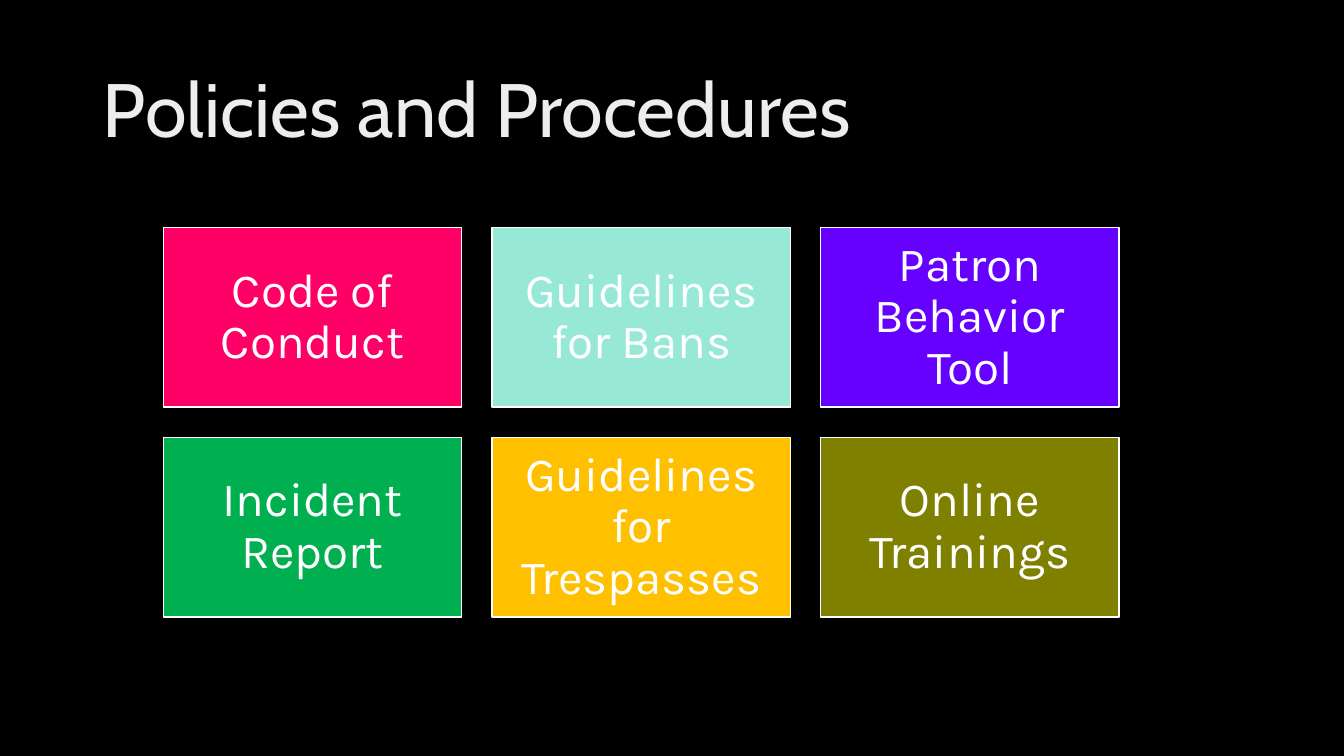
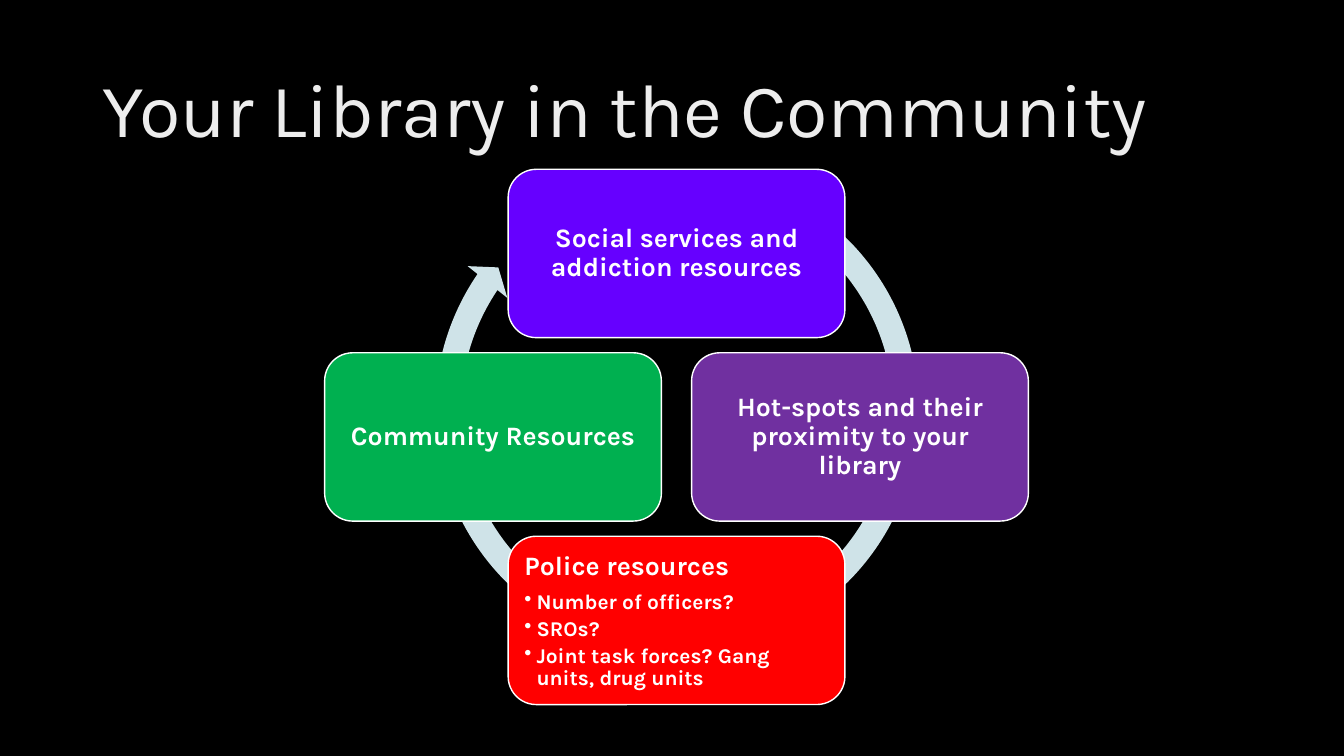
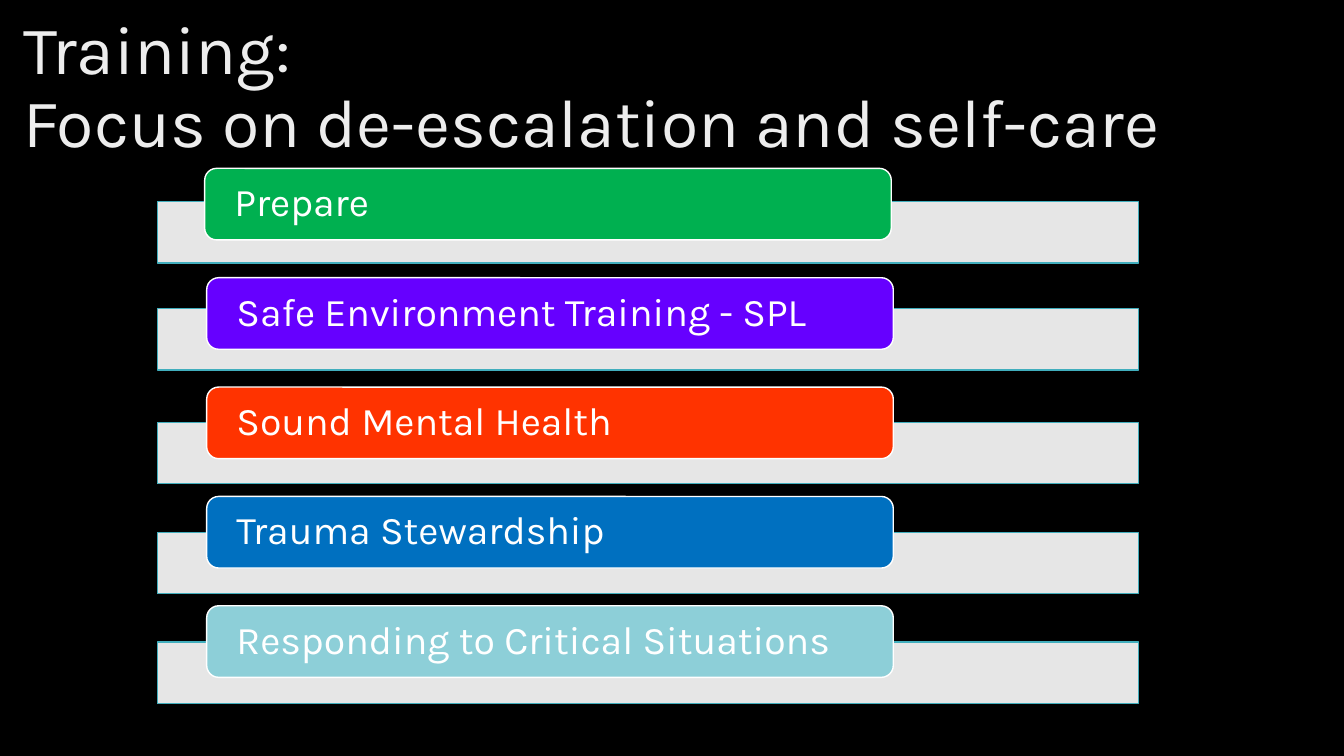
import pptx
import pptx.dml.color
import pptx.enum.shapes
import pptx.enum.text
import pptx.util
import lxml.etree

Inches = pptx.util.Inches
Pt = pptx.util.Pt
SHAPE = pptx.enum.shapes.MSO_SHAPE
ALIGN = pptx.enum.text.PP_ALIGN
ANCHOR = pptx.enum.text.MSO_ANCHOR


def colour(value):
    return pptx.dml.color.RGBColor.from_string(value)


class Deck:
    font = "Karla"
    background = "000000"
    title_colour = "EDEDED"
    text_colour = "FFFFFF"
    line_spacing = 0.9

    def __init__(self):
        self.deck = pptx.Presentation()
        self.deck.slide_width = Inches(13.33)
        self.deck.slide_height = Inches(7.5)
        fill = self.deck.slide_master.background.fill
        fill.solid()
        fill.fore_color.rgb = colour(self.background)
        self.page = None

    def add_page(self, text, area=(0.92, 0.4, 11.5, 1.45), size=54, font=None):
        self.page = self.deck.slides.add_slide(self.deck.slide_layouts[5])
        title = self.page.shapes.title
        title.left, title.top, title.width, title.height = map(Inches, area)
        frame = title.text_frame
        frame.text = text
        frame.auto_size = pptx.enum.text.MSO_AUTO_SIZE.NONE
        frame.vertical_anchor = ANCHOR.MIDDLE
        self.style(frame.paragraphs[0], size, ALIGN.LEFT, font=font, shade=self.title_colour)

    def style(self, para, size, align, bold=False, font=None, shade=None):
        para.alignment = align
        para.line_spacing = self.line_spacing
        for span in para.runs:
            span.font.name = font or self.font
            span.font.size = Pt(size)
            span.font.bold = bold
            span.font.color.rgb = colour(shade or self.text_colour)

    def shape(self, kind, area, fill, line=None):
        box = self.page.shapes.add_shape(kind, *map(Inches, area))
        box.shadow.inherit = False
        box.fill.solid()
        box.fill.fore_color.rgb = colour(fill)
        if line:
            box.line.color.rgb = colour(line)
            box.line.width = Pt(1)
        else:
            box.line.fill.background()
        return box

    def label(self, kind, area, fill, text, size, margins, align=ALIGN.CENTER, bold=False):
        box = self.shape(kind, area, fill, self.text_colour)
        frame = box.text_frame
        frame.word_wrap = True
        frame.vertical_anchor = ANCHOR.MIDDLE
        frame.margin_left = frame.margin_right = Inches(margins[0])
        frame.margin_top = frame.margin_bottom = Inches(margins[1])
        frame.text = text
        self.style(frame.paragraphs[0], size, align, bold)
        return box

    def bullets(self, box, items, size):
        frame = box.text_frame
        frame.vertical_anchor = ANCHOR.TOP
        heading = frame.paragraphs[0]
        heading.alignment = ALIGN.LEFT
        heading.space_after = Pt(7.5)
        for item in items:
            para = frame.add_paragraph()
            para.text = item
            para.level = 1
            properties = para._p.get_or_add_pPr()
            properties.set("marL", str(Inches(0.12)))
            properties.set("indent", str(-Inches(0.12)))
            bullet = lxml.etree.SubElement(properties, pptx.oxml.ns.qn("a:buChar"))
            bullet.set("char", "•")
            self.style(para, size, ALIGN.LEFT, bold=True)
            para.space_after = Pt(2.85)


def policies(deck):
    deck.add_page("Policies and Procedures", font="Cabin")
    cards = [
        ("Code of Conduct", "FF0066"),
        ("Guidelines for Bans", "97E9D5"),
        ("Patron Behavior Tool", "6600FF"),
        ("Incident Report", "00B050"),
        ("Guidelines for Trespasses", "FFC000"),
        ("Online Trainings", "808000"),
    ]
    for index, (text, fill) in enumerate(cards):
        row, column = divmod(index, 3)
        area = (1.62 + 3.26 * column, 2.26 + 2.08 * row, 2.96, 1.78)
        deck.label(SHAPE.RECTANGLE, area, fill, text, 34, (0.14, 0.14))


def community(deck):
    deck.add_page("Your Library in the Community")
    arrow = deck.shape(SHAPE.CIRCULAR_ARROW, (4.19, 1.55, 5.05, 5.05), "CFE3E8")
    for index, value in enumerate((0.05, 2.73, 128.51, 180.17, 0.05)):
        arrow.adjustments[index] = value
    stops = [
        ("Social services and addiction resources", "6600FF", 0, -1),
        ("Hot-spots and their proximity to your library", "7030A0", 1, 0),
        ("Police resources", "FF0000", 0, 1),
        ("Community Resources", "00B050", -1, 0),
    ]
    boxes = {}
    for text, fill, across, down in stops:
        area = (5.04 + 1.82 * across, 3.5 + 1.82 * down, 3.34, 1.67)
        boxes[text] = deck.label(
            SHAPE.ROUNDED_RECTANGLE, area, fill, text, 19, (0.08, 0.08), bold=True
        )
    questions = ["Number of officers?", "SROs?", "Joint task forces? Gang units, drug units"]
    deck.bullets(boxes["Police resources"], questions, 15)


def training(deck):
    deck.add_page(
        "Training:\vFocus on de-escalation and self-care", (0.13, 0.16, 12.77, 1.45), 48.6
    )
    courses = [
        ("Prepare", "00B050", 2.03, 2),
        ("Safe Environment Training - SPL", "6600FF", 2.05, 3.06),
        ("Sound Mental Health", "FF3300", 2.05, 4.19),
        ("Trauma Stewardship", "0070C0", 2.05, 5.28),
        ("Responding to Critical Situations", "8DCFD8", 2.05, 6.37),
    ]
    pitch = (6.01 - 1.67) / (len(courses) - 1)
    for index, (text, fill, left, bar_top) in enumerate(courses):
        deck.shape(SHAPE.RECTANGLE, (1.56, bar_top, 9.73, 0.61), "E6E6E6", "41AEBD")
        area = (left, 1.67 + pitch * index, 6.81, 0.71)
        deck.label(SHAPE.ROUNDED_RECTANGLE, area, fill, text, 28, (0.26, 0), ALIGN.LEFT)


def main():
    deck = Deck()
    policies(deck)
    community(deck)
    training(deck)
    deck.deck.save("out.pptx")


if __name__ == "__main__":
    main()
